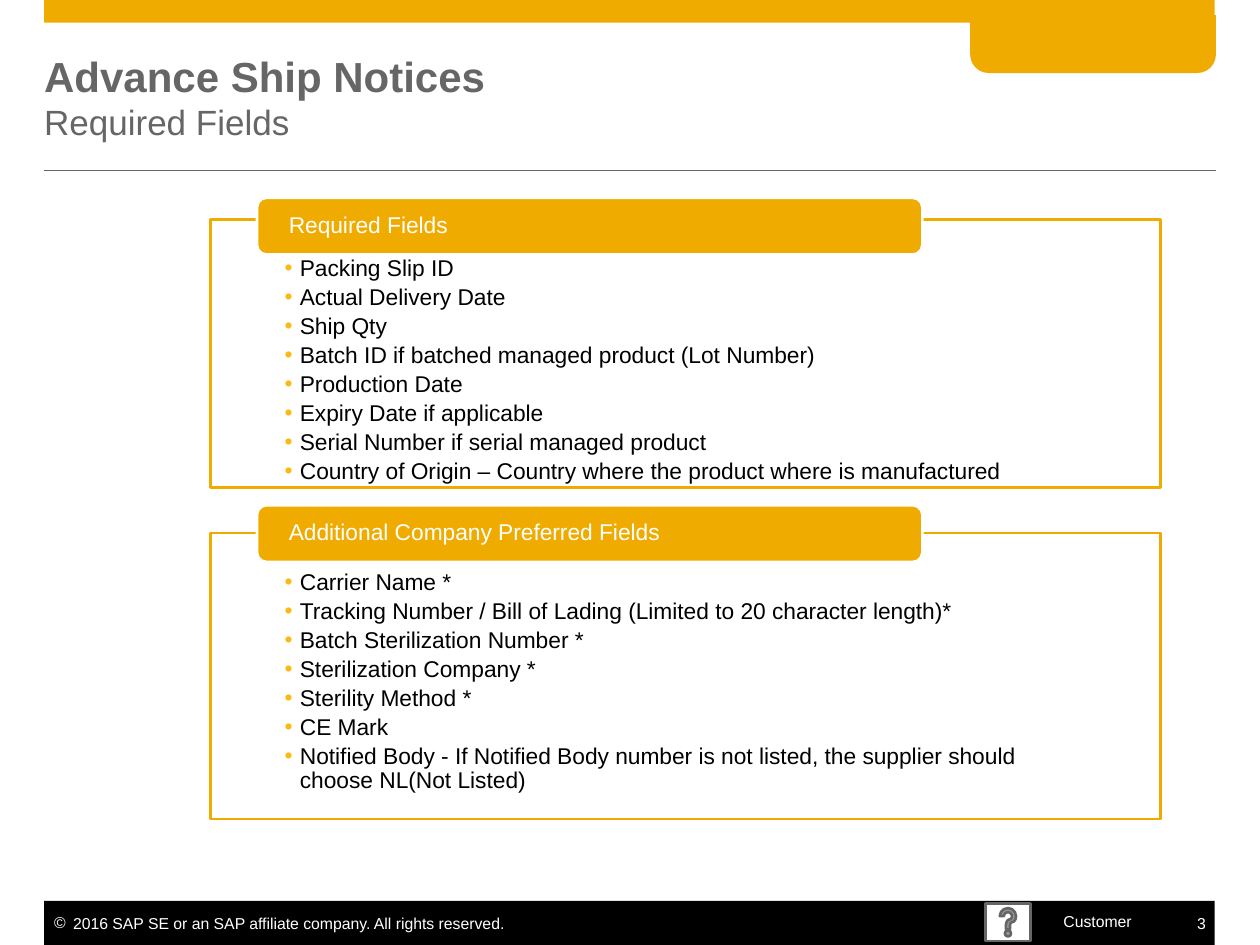
from dataclasses import dataclass

from lxml import etree
from pptx import Presentation
from pptx.dml.color import RGBColor
from pptx.enum.shapes import MSO_CONNECTOR, MSO_SHAPE
from pptx.enum.text import MSO_ANCHOR, PP_ALIGN
from pptx.oxml.ns import qn
from pptx.util import Inches, Pt

RECT = MSO_SHAPE.RECTANGLE
ROUND = MSO_SHAPE.ROUNDED_RECTANGLE
TAB = MSO_SHAPE.ROUND_2_SAME_RECTANGLE
HELP = MSO_SHAPE.ACTION_BUTTON_HELP
STRAIGHT = MSO_CONNECTOR.STRAIGHT
TOP, MIDDLE = MSO_ANCHOR.TOP, MSO_ANCHOR.MIDDLE
LEFT, RIGHT = PP_ALIGN.LEFT, PP_ALIGN.RIGHT

GOLD = RGBColor(0xF0, 0xAB, 0x00)
AMBER = RGBColor(0xFD, 0xB9, 0x13)
GRAY = RGBColor(0x66, 0x66, 0x66)
BLACK = RGBColor(0, 0, 0)
WHITE = RGBColor(0xFF, 0xFF, 0xFF)

FONT = "Arial"
EDGE, SPAN = 0.35, 9.29


@dataclass
class Box:
    left: float
    top: float
    width: float
    height: float

    def place(self) -> tuple:
        return tuple(map(Inches, (self.left, self.top, self.width, self.height)))


@dataclass
class Panel:
    title: str
    head: float
    top: float
    height: float
    items: list[str]


PANELS = [
    Panel("Required Fields", 1.57, 1.74, 2.13, [
        "Packing Slip ID",
        "Actual Delivery Date",
        "Ship Qty",
        "Batch ID if batched managed product (Lot Number)",
        "Production Date",
        "Expiry Date if applicable",
        "Serial Number if serial managed product",
        "Country of Origin – Country where the product where is manufactured",
    ]),
    Panel("Additional Company Preferred Fields", 4.01, 4.23, 2.27, [
        "Carrier Name *",
        "Tracking Number / Bill of Lading (Limited to 20 character length)*",
        "Batch Sterilization Number *",
        "Sterilization Company *",
        "Sterility Method *",
        "CE Mark",
        "Notified Body - If Notified Body number is not listed, "
        "the supplier should choose NL(Not Listed)",
    ]),
]


def add_shape(slide, kind, box: Box, fill: RGBColor, line: RGBColor | None = None):
    shape = slide.shapes.add_shape(kind, *box.place())
    shape.shadow.inherit = False
    shape.fill.solid()
    shape.fill.fore_color.rgb = fill
    if line is None:
        shape.line.fill.background()
    else:
        shape.line.color.rgb = line
        shape.line.width = Pt(1.5)
    return shape


def set_frame(shape, anchor=TOP, left=0.0, top=0.0, right=0.0, low=0.0):
    frame = shape.text_frame
    frame.word_wrap = True
    frame.vertical_anchor = anchor
    frame.margin_left, frame.margin_top = Inches(left), Inches(top)
    frame.margin_right, frame.margin_bottom = Inches(right), Inches(low)
    return frame


def set_font(font, size: float, color: RGBColor, bold: bool = False) -> None:
    font.name = FONT
    font.size = Pt(size)
    font.color.rgb = color
    font.bold = bold


def add_bullet(para, mark: str, color: RGBColor, indent: float) -> None:
    props = para._p.get_or_add_pPr()
    props.set("marL", str(Inches(indent)))
    props.set("indent", str(-Inches(indent)))
    tint = etree.SubElement(props, qn("a:buClr"))
    etree.SubElement(tint, qn("a:srgbClr"), val=str(color))
    etree.SubElement(props, qn("a:buFont"), typeface=FONT)
    etree.SubElement(props, qn("a:buChar"), char=mark)


def add_note(slide, box: Box, text: str, align=LEFT, left=0.0, right=0.0):
    shape = slide.shapes.add_textbox(*box.place())
    frame = set_frame(shape, left=left, right=right)
    frame.text = text
    para = frame.paragraphs[0]
    para.alignment = align
    set_font(para.runs[0].font, 9, WHITE)
    return para


def add_panel(slide, panel: Panel) -> None:
    # Framed list
    body = add_shape(slide, RECT, Box(1.67, panel.top, 7.54, panel.height), WHITE, GOLD)
    frame = set_frame(body, TOP, 0.59, 0.3, 0.59, 0.1)
    frame.text = "\n".join(panel.items)
    for para in frame.paragraphs:
        para.alignment = LEFT
        para.line_spacing = 0.9
        para.space_after = Pt(2.5)
        add_bullet(para, "•", AMBER, 0.12)
        set_font(para.runs[0].font, 13, BLACK)

    # Heading over the frame
    head = add_shape(slide, ROUND, Box(2.04, panel.head, 5.28, 0.45), GOLD, WHITE)
    frame = set_frame(head, MIDDLE, 0.23, 0, 0.23, 0)
    frame.text = panel.title
    para = frame.paragraphs[0]
    para.alignment = LEFT
    para.line_spacing = 0.9
    set_font(para.runs[0].font, 13, WHITE)


def main() -> None:
    deck = Presentation()
    deck.slide_width, deck.slide_height = Inches(10), Inches(7.5)
    slide = deck.slides.add_slide(deck.slide_layouts[6])

    # Top band, corner tab and rule
    add_shape(slide, RECT, Box(EDGE, 0, SPAN, 0.18), GOLD)
    tab = add_shape(slide, TAB, Box(7.7, 0.12, 1.95, 0.46), GOLD)
    tab.adjustments[0], tab.adjustments[1] = 0, 0.32
    rule = slide.shapes.add_connector(
        STRAIGHT, Inches(EDGE), Inches(1.35), Inches(9.65), Inches(1.35))
    rule.line.color.rgb = GRAY
    rule.line.width = Pt(0.5)
    etree.SubElement(rule._element.spPr, qn("a:effectLst"))

    # Title
    title = slide.shapes.add_textbox(*Box(EDGE, 0.35, SPAN, 0.83).place())
    frame = set_frame(title, MIDDLE)
    frame.text = "Advance Ship Notices\nRequired Fields"
    main_line, sub_line = frame.paragraphs
    set_font(main_line.runs[0].font, 24, GRAY, True)
    set_font(sub_line.runs[0].font, 20, GRAY)

    # Footer
    add_shape(slide, RECT, Box(EDGE, 7.15, SPAN, 0.35), BLACK)
    rights = add_note(
        slide, Box(EDGE, 7.25, 3.9, 0.15),
        "2016 SAP SE or an SAP affiliate company. All rights reserved.", left=0.08)
    add_bullet(rights, "©", WHITE, 0.15)
    add_note(slide, Box(8.44, 7.24, 0.9, 0.15), "Customer")
    add_note(slide, Box(9.42, 7.25, 0.23, 0.15), "3", RIGHT, right=0.08)
    add_shape(slide, HELP, Box(7.82, 7.17, 0.36, 0.3), WHITE, GRAY)

    # Field lists
    for panel in PANELS:
        add_panel(slide, panel)

    deck.save("out.pptx")


if __name__ == "__main__":
    main()
